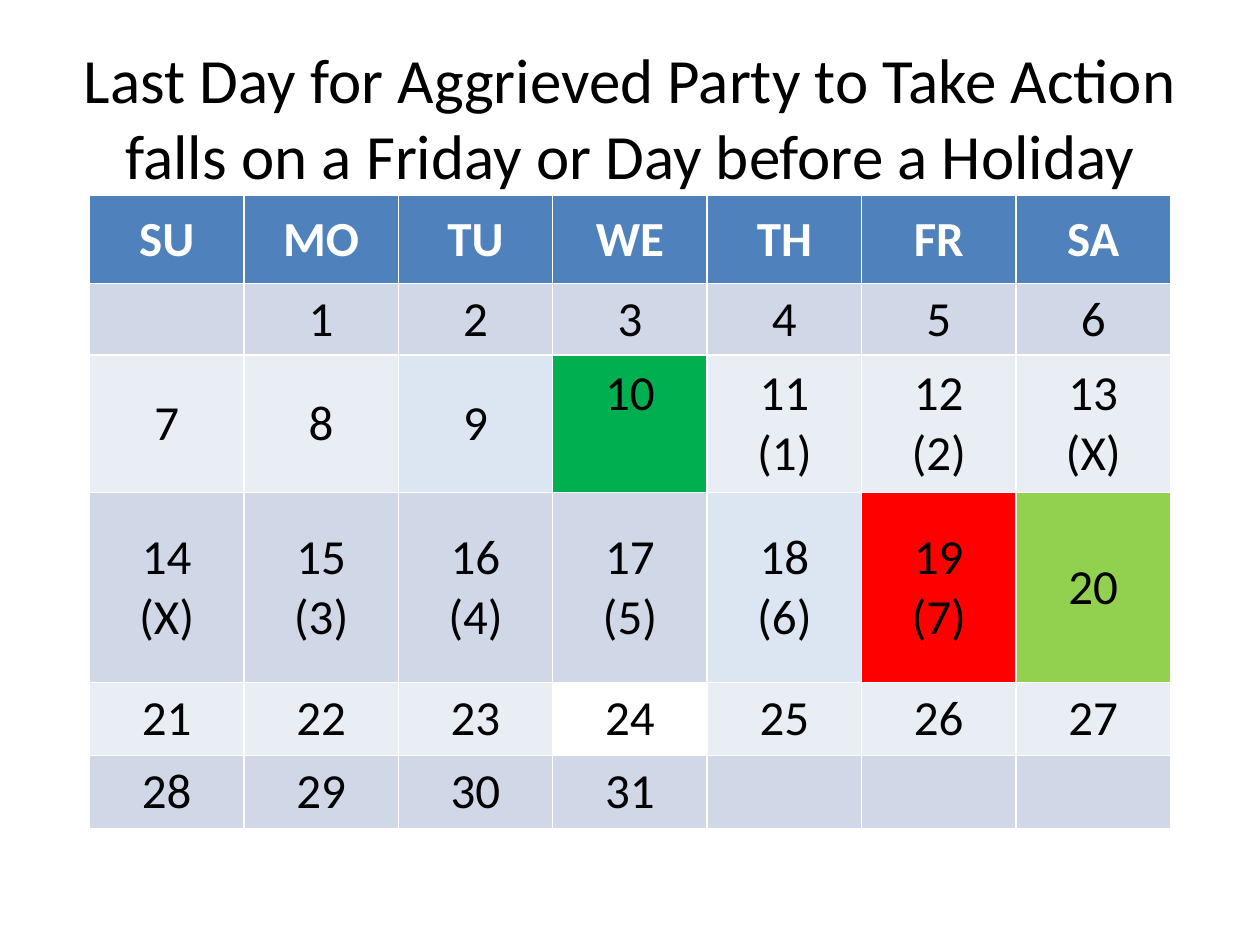
import pptx
import pptx.dml.color
import pptx.enum.text
import pptx.util

Inches = pptx.util.Inches
ANCHOR = pptx.enum.text.MSO_ANCHOR

FONT = "Calibri"
DAYS = ["SU", "MO", "TU", "WE", "TH", "FR", "SA"]
ROW_HEIGHTS = [0.7, 0.56, 1.09, 1.51, 0.58, 0.58]
COLUMN_WIDTH = 8.58 / len(DAYS)
FIRST_COLUMN = 1  # the month starts on a Monday
LAST_DATE = 31

HEADER_FILL = "4F81BD"
BAND_FILLS = ["D0D8E8", "E9EDF4"]
DATE_FILLS = {9: "DCE6F2", 10: "00B050", 18: "DCE6F2", 19: "FF0000",
              20: "92D050", 24: None}
COUNTS = dict(zip(range(11, 20), ["1", "2", "X", "X", "3", "4", "5", "6", "7"]))
START_DATE = 10


def color(hex_text):
    return pptx.dml.color.RGBColor.from_string(hex_text)


def write(frame, text, size, hex_text="000000", bold=False):
    """Fill a text frame with centred paragraphs, one for each line."""
    frame.word_wrap = True
    for index, line in enumerate(text.split("\n")):
        para = frame.paragraphs[0] if index == 0 else frame.add_paragraph()
        para.alignment = pptx.enum.text.PP_ALIGN.CENTER
        span = para.add_run()
        span.text = line
        span.font.name = FONT
        span.font.size = pptx.util.Pt(size)
        span.font.bold = bold
        span.font.color.rgb = color(hex_text)


def add_title(page, text):
    box = page.shapes.add_textbox(Inches(0.5), Inches(0.3), Inches(9), Inches(1.25))
    box.text_frame.vertical_anchor = ANCHOR.MIDDLE
    write(box.text_frame, text, size=36)


def format_cell(cell, fill, text="", **text_format):
    cell.vertical_anchor = ANCHOR.MIDDLE
    if fill is None:
        cell.fill.background()
    else:
        cell.fill.solid()
        cell.fill.fore_color.rgb = color(fill)
    if text:
        write(cell.text_frame, text, size=28, **text_format)


def add_calendar(page):
    frame = page.shapes.add_table(
        len(ROW_HEIGHTS), len(DAYS), Inches(0.71), Inches(1.55),
        Inches(COLUMN_WIDTH * len(DAYS)), Inches(sum(ROW_HEIGHTS)))
    table = frame.table
    for column in table.columns:
        column.width = Inches(COLUMN_WIDTH)
    for row, height in zip(table.rows, ROW_HEIGHTS):
        row.height = Inches(height)

    for column, day in enumerate(DAYS):
        format_cell(table.cell(0, column), HEADER_FILL, day,
                    hex_text="FFFFFF", bold=True)

    for week in range(len(ROW_HEIGHTS) - 1):
        for column in range(len(DAYS)):
            date = week * len(DAYS) + column - FIRST_COLUMN + 1
            text = str(date) if 1 <= date <= LAST_DATE else ""
            if date in COUNTS:
                text += f"\n({COUNTS[date]})"
            cell = table.cell(week + 1, column)
            format_cell(cell, DATE_FILLS.get(date, BAND_FILLS[week % 2]), text)
            if date == START_DATE:
                cell.vertical_anchor = ANCHOR.TOP
                cell.margin_top = Inches(0.07)


def main():
    deck = pptx.Presentation()
    deck.slide_width, deck.slide_height = Inches(10), Inches(7.5)
    page = deck.slides.add_slide(deck.slide_layouts[6])
    add_title(page, "Last Day for Aggrieved Party to Take Action "
                    "falls on a Friday or Day before a Holiday")
    add_calendar(page)
    deck.save("out.pptx")


if __name__ == "__main__":
    main()
